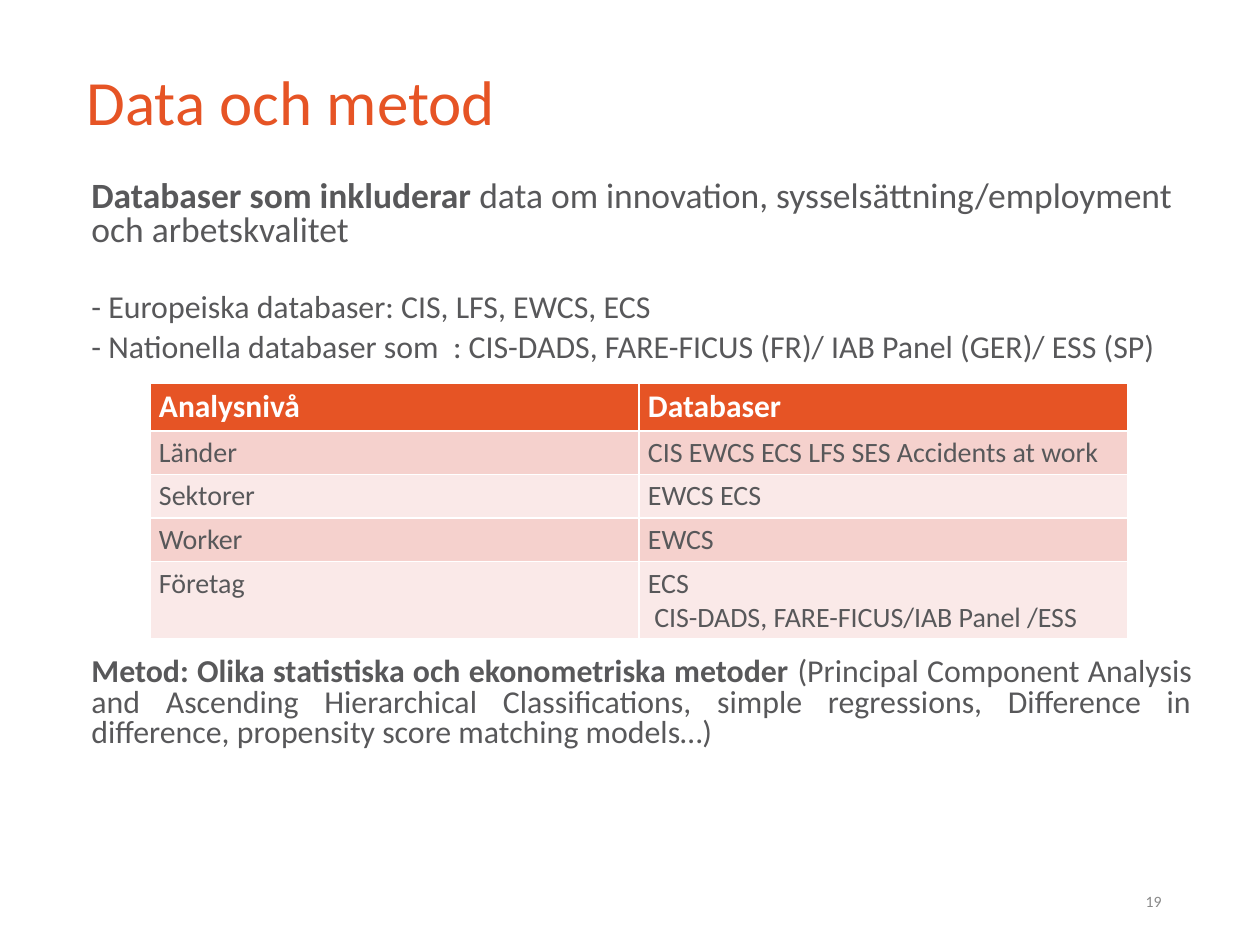
from dataclasses import dataclass

from pptx import Presentation
from pptx import util as u
from pptx.dml.color import RGBColor
from pptx.enum import text

ALIGN = text.PP_ALIGN
ANCHOR = text.MSO_ANCHOR


@dataclass(frozen=True)
class Theme:
    """Colours, font and type sizes of the slide."""
    font: str = "Calibri"
    accent: str = "E65425"
    ink: str = "58585A"
    white: str = "FFFFFF"
    muted: str = "898989"
    bands: tuple = ("F5D1CD", "FAE9E8")
    title: float = 36
    lead: float = 20.3
    body: float = 18.2
    header: float = 18
    cell: float = 16
    number: float = 9


class SlideBuilder:
    """Holds the theme and the current slide."""

    def __init__(self, deck, theme):
        """Start a title-only slide."""
        self.theme = theme
        self.slide = deck.slides.add_slide(deck.slide_layouts[5])

    @staticmethod
    def px(*lengths):
        """Turn px lengths into EMU."""
        return [round(length * 914400 / 126) for length in lengths]

    def add_runs(self, paragraph, runs, size, color, align=ALIGN.LEFT):
        """Add (wording, bold) runs to a paragraph."""
        paragraph.alignment = align
        for wording, bold in runs:
            run = paragraph.add_run()
            run.text = wording
            run.font.name = self.theme.font
            run.font.size = u.Pt(size)
            run.font.bold = bold
            run.font.color.rgb = RGBColor.from_string(color)

    def title(self, wording, box):
        """Place and fill the title placeholder."""
        heading = self.slide.shapes.title
        heading.left, heading.top, heading.width, heading.height = self.px(*box)
        frame = heading.text_frame
        frame.vertical_anchor = ANCHOR.MIDDLE
        frame.paragraphs[0].line_spacing = 0.9
        self.add_runs(frame.paragraphs[0], [(wording, False)],
                      self.theme.title, self.theme.accent)

    def text_frame(self, box, anchor=ANCHOR.TOP):
        """Add a wrapping text box and return its frame."""
        frame = self.slide.shapes.add_textbox(*self.px(*box)).text_frame
        frame.word_wrap = True
        frame.vertical_anchor = anchor
        return frame

    def body(self, paragraphs, box):
        """Add paragraphs of (runs, size, align, line spacing, space before)."""
        frame = self.text_frame(box)
        for index, (runs, size, align, spacing, before) in enumerate(paragraphs):
            paragraph = frame.add_paragraph() if index else frame.paragraphs[0]
            paragraph.line_spacing = spacing
            paragraph.space_before = u.Pt(before)
            self.add_runs(paragraph, runs, size, self.theme.ink, align)

    def table(self, rows, left, top, column_width, heights):
        """Add a table with a header row and two alternating bands."""
        theme = self.theme
        columns = len(rows[0])
        grid = self.slide.shapes.add_table(
            len(rows), columns,
            *self.px(left, top, column_width * columns, sum(heights))).table
        for column in grid.columns:
            column.width = self.px(column_width)[0]
        for r, (entries, height) in enumerate(zip(rows, heights)):
            grid.rows[r].height = self.px(height)[0]
            size, color, fill = (
                (theme.cell, theme.ink, theme.bands[(r - 1) % 2]) if r
                else (theme.header, theme.white, theme.accent))
            for c, entry in enumerate(entries):
                cell = grid.cell(r, c)
                cell.fill.solid()
                cell.fill.fore_color.rgb = RGBColor.from_string(fill)
                cell.margin_left, cell.margin_top = self.px(9, 5)
                cell.margin_right, cell.margin_bottom = self.px(9, 5)
                frame = cell.text_frame
                for index, line in enumerate(entry.split("\n")):
                    paragraph = frame.add_paragraph() if index else frame.paragraphs[0]
                    self.add_runs(paragraph, [(line, r == 0)], size, color)

    def page_number(self, number, box):
        """Add the page number at the lower right."""
        frame = self.text_frame(box, ANCHOR.MIDDLE)
        self.add_runs(frame.paragraphs[0], [(number, False)],
                      self.theme.number, self.theme.muted, ALIGN.RIGHT)


def main():
    """Build and save the slide."""
    theme = Theme()
    deck = Presentation()
    deck.slide_width, deck.slide_height = SlideBuilder.px(1260, 945)
    page = SlideBuilder(deck, theme)
    page.title("Data och metod", (74, 62, 1063, 87))
    page.body([
        ([("Databaser som inkluderar ", True),
          ("data om innovation, sysselsättning/employment och arbetskvalitet", False)],
         theme.lead, ALIGN.LEFT, 0.8, 0),
        ([("- Europeiska databaser: CIS, LFS, EWCS, ECS", False)],
         theme.body, ALIGN.JUSTIFY, 0.7, 27.5),
        ([("- Nationella databaser som  : CIS-DADS, FARE-FICUS (FR)/ "
           "IAB Panel (GER)/ ESS (SP)", False)],
         theme.body, ALIGN.JUSTIFY, 0.7, 7.5),
        ([("Metod: Olika statistiska och ekonometriska metoder", True),
          (" (Principal Component Analysis and Ascending Hierarchical "
           "Classifications, simple regressions, Difference in difference, "
           "propensity score matching models…)", False)],
         theme.body, ALIGN.JUSTIFY, 0.8, 168),
    ], (79, 175, 1126, 645))
    page.table([
        ("Analysnivå", "Databaser"),
        ("Länder", "CIS EWCS ECS LFS SES Accidents at work"),
        ("Sektorer", "EWCS ECS"),
        ("Worker", "EWCS"),
        ("Företag", "ECS\n CIS-DADS, FARE-FICUS/IAB Panel /ESS"),
    ], 150, 383, 489, (47, 43, 43, 43, 77))
    page.page_number("19", (890, 876, 284, 50))
    deck.save("out.pptx")


if __name__ == "__main__":
    main()
